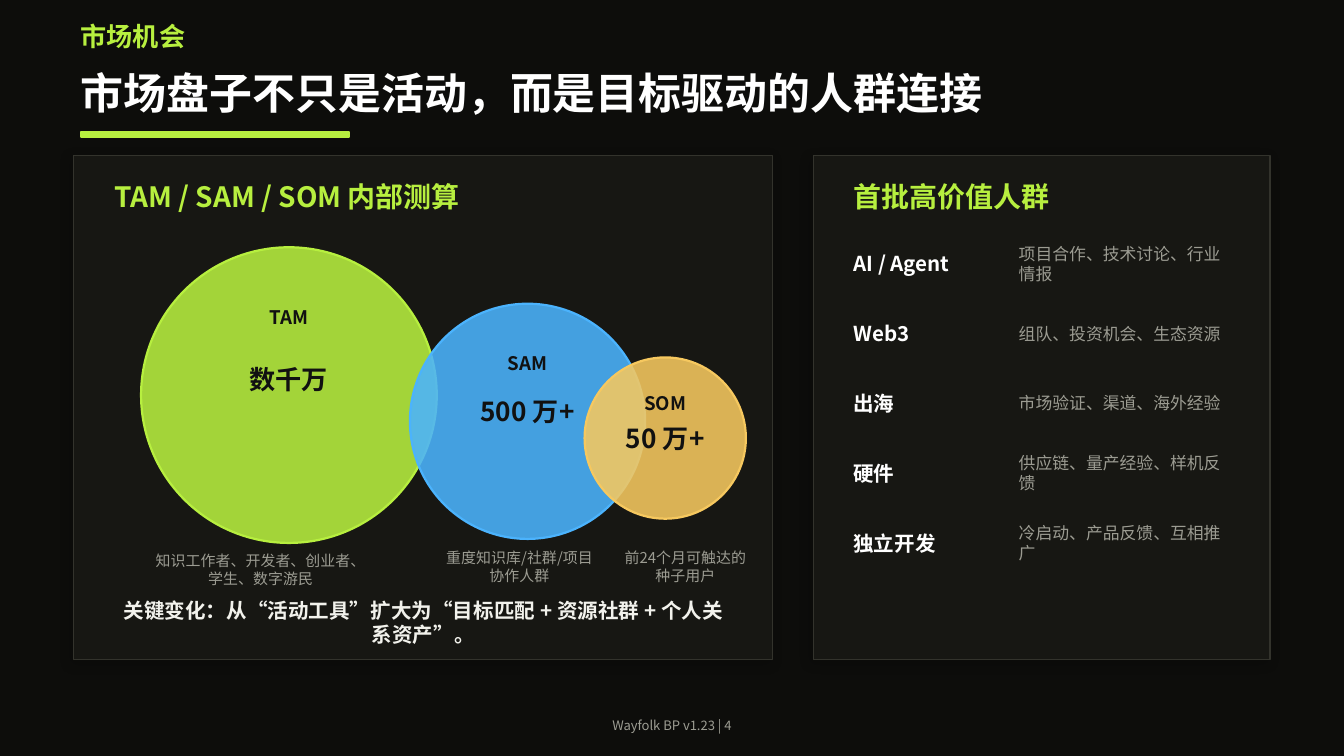
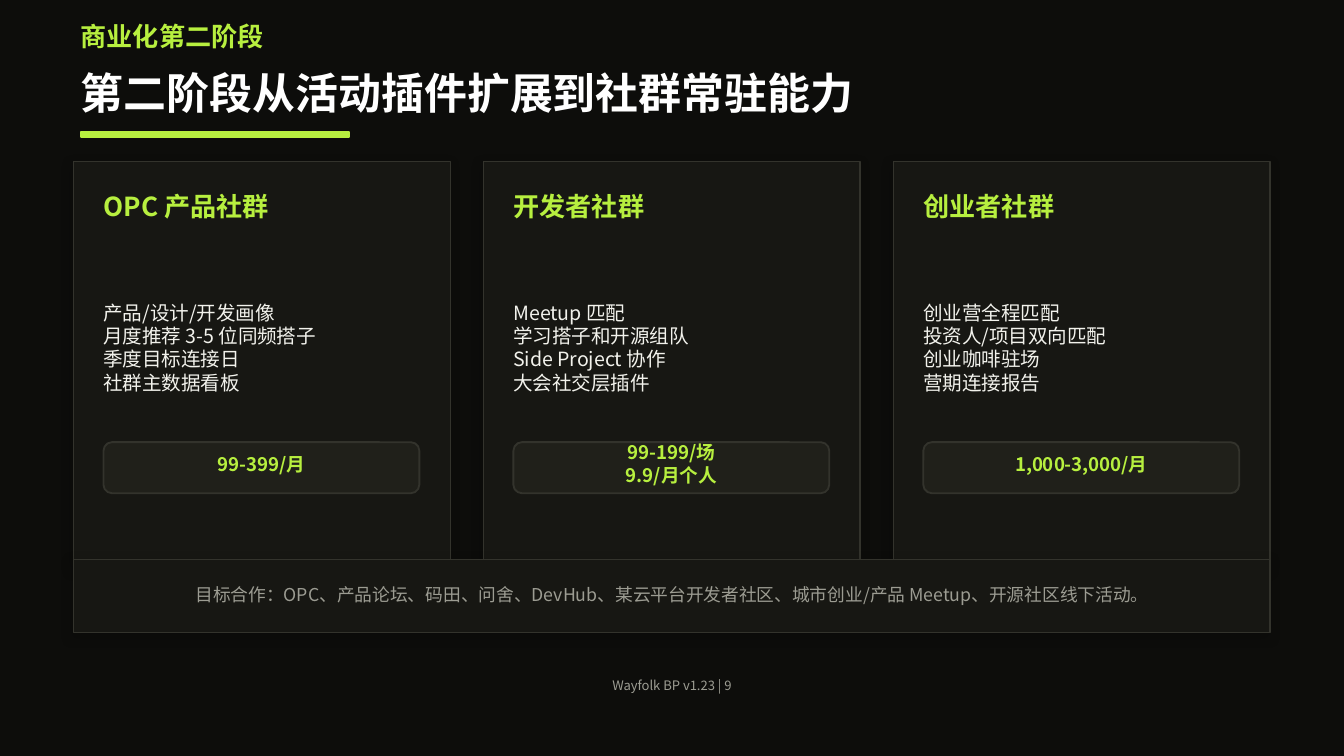
import pptx
import pptx.dml.color
import pptx.enum.shapes
import pptx.enum.text
import pptx.oxml.ns
import pptx.util
from lxml import etree

FONT = "Noto Sans CJK SC"
LIME, BLUE, AMBER = "B7EF3F", "4BB3FD", "F6C85F"
BACKGROUND, PANEL, CHIP, BORDER = "0D0D0B", "171713", "20201A", "33332C"
WHITE, SOFT, MUTED, INK = "FFFFFF", "F2F2EC", "9C9C92", "111111"

PANEL_TOP, PANEL_HEIGHT = 83.52, 270
MARGIN = 39.6
CARD_WIDTH, CARD_PITCH = 201.6, 219.6

MARKETS = [
    ("TAM", "数千万", LIME, (36, 48.96, 158.4), (28.8, 60.48),
     "知识工作者、开发者、创业者、\n学生、数字游民", (28.08, 205.2, 144)),
    ("SAM", "500 万+", BLUE, (180, 79.2, 126), (23.04, 47.52),
     "重度知识库/社群/项目\n协作人群", (175.68, 203.76, 126)),
    ("SOM", "50 万+", AMBER, (273.6, 108, 86.4), (15.84, 33.12),
     "前24个月可触达的\n种子用户", (273.6, 203.76, 108)),
]
AUDIENCES = [
    ("AI / Agent", "项目合作、技术讨论、行业情报"),
    ("Web3", "组队、投资机会、生态资源"),
    ("出海", "市场验证、渠道、海外经验"),
    ("硬件", "供应链、量产经验、样机反馈"),
    ("独立开发", "冷启动、产品反馈、互相推广"),
]
COMMUNITIES = [
    ("OPC 产品社群",
     "产品/设计/开发画像\n月度推荐 3-5 位同频搭子\n季度目标连接日\n社群主数据看板",
     "99-399/月"),
    ("开发者社群",
     "Meetup 匹配\n学习搭子和开源组队\nSide Project 协作\n大会社交层插件",
     "99-199/场\n9.9/月个人"),
    ("创业者社群",
     "创业营全程匹配\n投资人/项目双向匹配\n创业咖啡驻场\n营期连接报告",
     "1,000-3,000/月"),
]
PARTNERS = ("目标合作：OPC、产品论坛、码田、问舍、DevHub、某云平台开发者社区、"
            "城市创业/产品 Meetup、开源社区线下活动。")


def color(value):
    """Turn a hex string into a colour."""
    return pptx.dml.color.RGBColor.from_string(value)


def place(box):
    """Turn a box given in points into lengths."""
    return [pptx.util.Pt(length) for length in box]


def add_element(parent, tag, **attributes):
    """Append a drawing element with the given attributes."""
    return etree.SubElement(parent, pptx.oxml.ns.qn(tag), attributes)


def add_text(slide, box, text, size, hue, bold=False, align="LEFT"):
    """Add a text box with one paragraph for each line of text."""
    frame = slide.shapes.add_textbox(*place(box)).text_frame
    frame_format = {
        "word_wrap": True,
        "vertical_anchor": pptx.enum.text.MSO_ANCHOR.MIDDLE,
        "margin_left": 0, "margin_right": 0, "margin_top": 0, "margin_bottom": 0,
    }
    for name, value in frame_format.items():
        setattr(frame, name, value)
    font_format = {"name": FONT, "size": pptx.util.Pt(size), "bold": bold}
    for index, line in enumerate(text.split("\n")):
        paragraph = frame.add_paragraph() if index else frame.paragraphs[0]
        paragraph.alignment = getattr(pptx.enum.text.PP_ALIGN, align)
        run = paragraph.add_run()
        run.text = line
        for name, value in font_format.items():
            setattr(run.font, name, value)
        run.font.color.rgb = color(hue)
        add_element(run._r.get_or_add_rPr(), "a:ea", typeface=FONT)


def add_block(slide, kind, box, fill, line, line_width=1):
    """Add a filled and outlined preset shape."""
    preset = getattr(pptx.enum.shapes.MSO_SHAPE, kind)
    shape = slide.shapes.add_shape(preset, *place(box))
    shape.shadow.inherit = False
    shape.fill.solid()
    shape.fill.fore_color.rgb = color(fill)
    shape.line.color.rgb = color(line)
    shape.line.width = pptx.util.Pt(line_width)
    return shape


def add_panel(slide, box):
    """Add a dark panel with a soft shadow."""
    shape = add_block(slide, "RECTANGLE", box, PANEL, BORDER, 0.6)
    effects = shape._element.spPr.find(pptx.oxml.ns.qn("a:effectLst"))
    shadow = add_element(effects, "a:outerShdw", blurRad=str(pptx.util.Pt(6)),
                         dist=str(pptx.util.Pt(2)), dir=str(135 * 60000),
                         algn="bl", rotWithShape="0")
    tint = add_element(shadow, "a:srgbClr", val="000000")
    add_element(tint, "a:alpha", val="20000")


def add_base(presentation, section, title, number, footer_top):
    """Add a slide with its background, title block and footer."""
    slide = presentation.slides.add_slide(presentation.slide_layouts[6])
    slide.background.fill.solid()
    slide.background.fill.fore_color.rgb = color(BACKGROUND)
    left, width = 43.2, 633.6
    add_text(slide, (left, 10.08, width, 18.72), section, 14, LIME, True)
    add_text(slide, (left, 28.8, width, 41.76), title, 23, WHITE, True)
    add_block(slide, "RECTANGLE", (left, 70.56, 144, 2.88), LIME, LIME)
    add_text(slide, (left, footer_top, width, 11.52),
             f"Wayfolk BP v1.23 | {number}", 7, MUTED, align="CENTER")
    return slide


def add_headed_panel(slide, box, heading):
    """Add a panel with its heading."""
    left, top, width, height = box
    add_panel(slide, box)
    add_text(slide, (left + 21.6, top + 11.52, width - 43.2, 20.16),
             heading, 15, LIME, True)


def add_market(slide, box):
    """Add the market panel with its overlapping circles."""
    left, top, width, height = box
    add_headed_panel(slide, box, "TAM / SAM / SOM 内部测算")
    for name, amount, hue, circle, text_tops, caption, caption_place in MARKETS:
        x, y, diameter = circle
        x, y = left + x, top + y
        disc = add_block(slide, "OVAL", (x, y, diameter, diameter), hue, hue, 1.2)
        tint = disc._element.spPr.find(pptx.oxml.ns.qn("a:solidFill"))[0]
        add_element(tint, "a:alpha", val="88000")
        name_top, amount_top = text_tops
        add_text(slide, (x, y + name_top, diameter, 17.28), name, 10, INK, True, "CENTER")
        add_text(slide, (x, y + amount_top, diameter, 20.16), amount, 14, INK, True, "CENTER")
        caption_left, caption_top, caption_width = caption_place
        add_text(slide, (left + caption_left, top + caption_top, caption_width, 32.4),
                 caption, 8, MUTED, align="CENTER")
    add_text(slide, (left + 21.6, top + 240.48, width - 43.2, 18.72),
             "关键变化：从“活动工具”扩大为“目标匹配 + 资源社群 + 个人关系资产”。",
             11, SOFT, True, "CENTER")


def add_audiences(slide, box):
    """Add the panel that lists the first audiences."""
    left, top, width, height = box
    add_headed_panel(slide, box, "首批高价值人群")
    for index, (audience, needs) in enumerate(AUDIENCES):
        row_top = top + 47.52 + index * 37.44
        add_text(slide, (left + 21.6, row_top, 86.4, 20.16), audience, 11, WHITE, True)
        add_text(slide, (left + 110.16, row_top, 111.6, 20.16), needs, 9, MUTED)


def add_community(slide, box, name, offers, price):
    """Add a community card with its offers and price chip."""
    left, top, width, height = box
    inner_left, inner_width = left + 15.84, 169.2
    add_panel(slide, box)
    add_text(slide, (inner_left, top + 13.68, inner_width, 20.16), name, 14, LIME, True)
    add_text(slide, (inner_left, top + 47.52, inner_width, 104.4), offers, 10.5, SOFT)
    add_block(slide, "ROUNDED_RECTANGLE", (inner_left, top + 150.48, inner_width, 27.36),
              CHIP, BORDER)
    add_text(slide, (inner_left, top + 156.24, inner_width, 11.52),
             price, 10, LIME, True, "CENTER")


def add_partners(slide, box):
    """Add the band that names the target partners."""
    left, top, width, height = box
    add_panel(slide, box)
    add_text(slide, (left + 21.6, top + 12.96, width - 43.2, 11.52),
             PARTNERS, 9.5, MUTED, align="CENTER")


def add_market_slide(presentation):
    """Build the market opportunity slide."""
    slide = add_base(presentation, "市场机会",
                     "市场盘子不只是活动，而是目标驱动的人群连接", 4, 383.04)
    add_market(slide, (MARGIN, PANEL_TOP, 374.4, PANEL_HEIGHT))
    add_audiences(slide, (435.6, PANEL_TOP, 244.8, PANEL_HEIGHT))


def add_community_slide(presentation):
    """Build the second commercial stage slide."""
    slide = add_base(presentation, "商业化第二阶段",
                     "第二阶段从活动插件扩展到社群常驻能力", 9, 361.44)
    for index, community in enumerate(COMMUNITIES):
        box = (MARGIN + index * CARD_PITCH, 86.4, CARD_WIDTH, 217.44)
        add_community(slide, box, *community)
    add_partners(slide, (MARGIN, 299.52, 640.8, 39.6))


def main():
    """Build and save the presentation."""
    presentation = pptx.Presentation()
    presentation.slide_width = pptx.util.Pt(720)
    presentation.slide_height = pptx.util.Pt(405)
    add_market_slide(presentation)
    add_community_slide(presentation)
    presentation.save("out.pptx")


if __name__ == "__main__":
    main()
